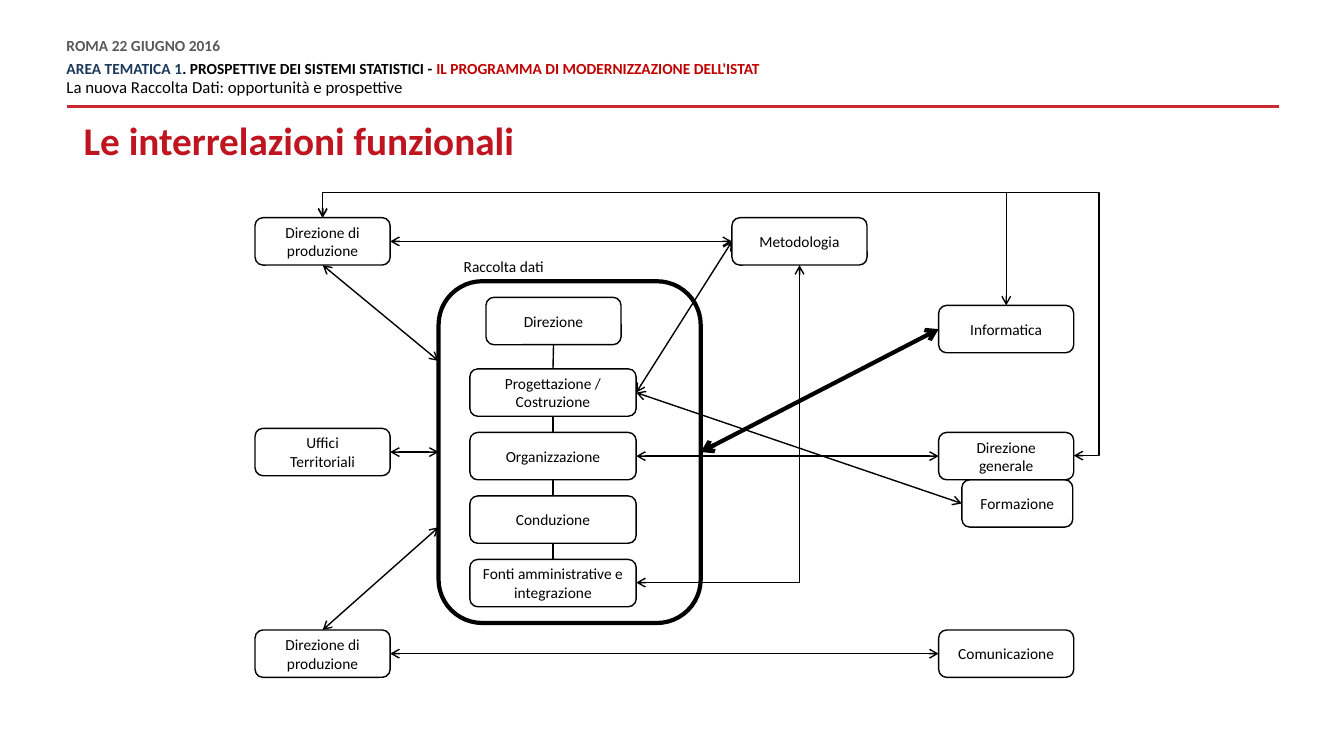
from lxml import etree
from pptx import Presentation, util as u
from pptx.dml.color import RGBColor
from pptx.enum import shapes, text
from pptx.oxml.ns import qn

COLORS = {"black": "000000", "grey": "595959", "navy": "1C385A",
          "red": "C00000", "title": "BE1520", "rule": "C72A31"}
TOP, LEFT, BOTTOM, RIGHT = range(4)
BOX_WIDTH, BOX_HEIGHT = 1.34, 0.47


def color(name):
    return RGBColor.from_string(COLORS[name])


def add_run(paragraph, words, size=11, color_name="black", bold=False):
    run = paragraph.add_run()
    run.text = words
    run.font.name = "Calibri"
    run.font.size = u.Pt(size)
    run.font.bold = bold
    run.font.color.rgb = color(color_name)


def style_line(shape, width, color_name="black", arrows=False):
    shape.line.color.rgb = color(color_name)
    shape.line.width = u.Pt(width)
    if arrows:
        line = shape.line._get_or_add_ln()
        for end in ("a:headEnd", "a:tailEnd"):
            etree.SubElement(line, qn(end), type="arrow")


def add_title(slide, words):
    title = slide.shapes.title
    title.left, title.top = u.Inches(0.73), u.Inches(1.1)
    title.width, title.height = u.Inches(4.53), u.Inches(0.57)
    frame = title.text_frame
    frame.word_wrap = False
    frame.auto_size = text.MSO_AUTO_SIZE.NONE
    frame.vertical_anchor = text.MSO_ANCHOR.TOP
    paragraph = frame.paragraphs[0]
    paragraph.alignment = text.PP_ALIGN.LEFT
    add_run(paragraph, words, 28, "title", True)


def add_text_frame(slide, left, top, width, height, wrap):
    box = slide.shapes.add_textbox(*map(u.Inches, (left, top, width, height)))
    box.text_frame.word_wrap = wrap
    return box.text_frame


def add_header(slide):
    frame = add_text_frame(slide, 0.66, 0.39, 8.34, 0.59, True)
    frame.margin_left = frame.margin_right = frame.margin_top = frame.margin_bottom = 0
    lines = [
        (0, 6, [("ROMA 22 GIUGNO 2016", 11, "grey", True)]),
        (0, 0, [("AREA TEMATICA 1", 11, "navy", True),
                (". PROSPETTIVE DEI SISTEMI STATISTICI - ", 11, "black", True),
                ("IL PROGRAMMA DI MODERNIZZAZIONE DELL'ISTAT", 11, "red", True)]),
        (3, 6, [("La nuova Raccolta Dati: opportunità e prospettive", 12, "black", False)]),
    ]
    for index, (before, after, runs) in enumerate(lines):
        paragraph = frame.add_paragraph() if index else frame.paragraphs[0]
        paragraph.line_spacing = u.Pt(10.8)
        paragraph.space_before, paragraph.space_after = u.Pt(before), u.Pt(after)
        for run in runs:
            add_run(paragraph, *run)


def add_box(slide, left, top, lines=(), width=BOX_WIDTH, height=BOX_HEIGHT, line_width=1):
    box = slide.shapes.add_shape(shapes.MSO_SHAPE.ROUNDED_RECTANGLE,
                                 *map(u.Inches, (left, top, width, height)))
    box.shadow.inherit = False
    box.fill.background()
    style_line(box, line_width)
    frame = box.text_frame
    frame.word_wrap = True
    frame.vertical_anchor = text.MSO_ANCHOR.MIDDLE
    for index, words in enumerate(lines):
        paragraph = frame.add_paragraph() if index else frame.paragraphs[0]
        paragraph.alignment = text.PP_ALIGN.CENTER
        add_run(paragraph, words)
    return box


def add_link(slide, start, end, width=1, color_name="black", arrows=True):
    connector = slide.shapes.add_connector(shapes.MSO_CONNECTOR.STRAIGHT, 0, 0, 0, 0)
    if isinstance(start[0], float):
        connector.begin_x, connector.begin_y = map(u.Inches, start)
    else:
        connector.begin_connect(*start)
    if isinstance(end[0], float):
        connector.end_x, connector.end_y = map(u.Inches, end)
    else:
        connector.end_connect(*end)
    style_line(connector, width, color_name, arrows)
    etree.SubElement(connector._element.spPr, qn("a:effectLst"))


def add_bent_link(slide, *points):
    start, *others = [tuple(map(u.Inches, point)) for point in points]
    builder = slide.shapes.build_freeform(*start)
    builder.add_line_segments(others, close=False)
    route = builder.convert_to_shape()
    route.shadow.inherit = False
    route.fill.background()
    style_line(route, 1, arrows=True)


def main():
    presentation = Presentation()
    presentation.slide_width, presentation.slide_height = u.Inches(13.33), u.Inches(7.5)
    slide = presentation.slides.add_slide(presentation.slide_layouts[5])
    add_title(slide, "Le interrelazioni funzionali")
    add_link(slide, (0.66, 1.06), (12.69, 1.06), 2, "rule", False)
    add_header(slide)

    collection = add_box(slide, 4.35, 2.79, width=2.6, height=3.39, line_width=3)
    label = add_text_frame(slide, 4.5, 2.5, 1.09, 0.29, False)
    add_run(label.paragraphs[0], "Raccolta dati")

    production_top = add_box(slide, 2.53, 2.16, ["Direzione di produzione"])
    offices = add_box(slide, 2.53, 4.25, ["Uffici", "Territoriali"])
    production_bottom = add_box(slide, 2.53, 6.25, ["Direzione di produzione"])
    methodology = add_box(slide, 7.26, 2.16, ["Metodologia"])
    informatics = add_box(slide, 9.31, 3.03, ["Informatica"])
    general = add_box(slide, 9.31, 4.29, ["Direzione generale"])
    training = add_box(slide, 9.54, 4.76, ["Formazione"], width=1.1)
    communication = add_box(slide, 9.31, 6.25, ["Comunicazione"])

    phases = ["Progettazione / Costruzione", "Organizzazione", "Conduzione",
              "Fonti amministrative e integrazione"]
    chain = [add_box(slide, 4.82, 2.95, ["Direzione"])]
    chain += [add_box(slide, 4.66, 3.66 + 0.63 * index, [phase], width=1.65)
              for index, phase in enumerate(phases)]
    for upper, lower in zip(chain, chain[1:]):
        add_link(slide, (upper, BOTTOM), (lower, TOP), arrows=False)
    design, organisation = chain[1:3]

    for start, end in [
        ((production_bottom, RIGHT), (communication, LEFT)),
        ((organisation, RIGHT), (general, LEFT)),
        ((production_top, RIGHT), (methodology, LEFT)),
        ((design, RIGHT), (methodology, LEFT)),
        ((design, RIGHT), (training, LEFT)),
        ((offices, RIGHT), (collection, LEFT)),
        ((production_top, BOTTOM), (4.35, 3.58)),
        ((production_bottom, TOP), (4.35, 5.23)),
    ]:
        add_link(slide, start, end)
    add_link(slide, (collection, RIGHT), (informatics, LEFT), 3)

    add_bent_link(slide, (7.93, 2.63), (7.93, 5.78), (6.31, 5.78))
    add_bent_link(slide, (3.2, 2.16), (3.2, 1.91), (9.98, 1.91), (9.98, 3.03))
    add_bent_link(slide, (3.2, 2.16), (3.2, 1.91), (10.9, 1.91), (10.9, 4.52), (10.65, 4.52))
    presentation.save("out.pptx")


if __name__ == "__main__":
    main()
